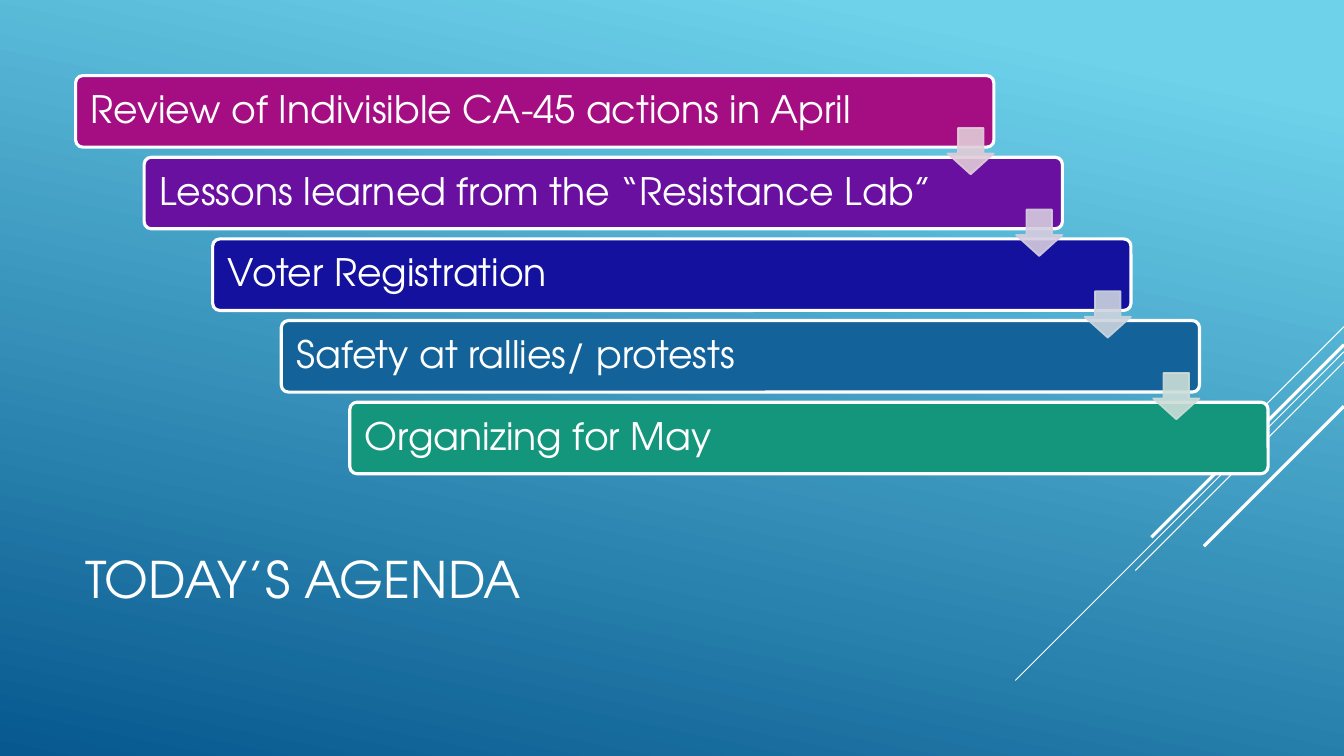
from lxml import etree
from pptx import Presentation
from pptx import util as u
from pptx.dml.color import RGBColor
from pptx.enum import shapes, text
from pptx.oxml import ns

WIDTH, HEIGHT = u.Inches(13.333), u.Inches(7.5)
FONT = "TeX Gyre Adventor"
WHITE = RGBColor(0xFF, 0xFF, 0xFF)
SKY = RGBColor(0x6E, 0xD2, 0xEB)
DEEP_BLUE = RGBColor(0x06, 0x58, 0x8E)

AGENDA = [
    ("Review of Indivisible CA-45 actions in April", RGBColor(0xA5, 0x0E, 0x82)),
    ("Lessons learned from the “Resistance Lab”", RGBColor(0x6A, 0x10, 0xA1)),
    ("Voter Registration", RGBColor(0x13, 0x11, 0x9D)),
    ("Safety at rallies/ protests", RGBColor(0x13, 0x63, 0x9A)),
    ("Organizing for May", RGBColor(0x14, 0x96, 0x7C)),
]
ARROW_COLOURS = [
    RGBColor(0xE1, 0xCC, 0xD8),
    RGBColor(0xD6, 0xCC, 0xDF),
    RGBColor(0xCC, 0xD4, 0xDE),
    RGBColor(0xCC, 0xDD, 0xD8),
]

# The staircase, in inches: each step moves right and down by the same amount.
START = 0.75
STEP_X, STEP_Y = 0.68, 0.81
BAR_WIDTH, BAR_HEIGHT = 9.11, 0.71
ARROW_SIZE, ARROW_DROP = 0.46, 0.52

# Diagonals at 45 degrees from the right edge: start height, run, line width.
DIAGONALS = [
    (3.24, 1.0, 0.75),
    (3.49, 3.26, 0.75),
    (3.59, 2.07, 0.75),
    (3.42, 1.91, 2.25),
    (4.03, 1.39, 2.25),
]


def apply_format(target, values):
    for name, value in values.items():
        setattr(target, name, value)


def paint_background(page):
    fill = page.background.fill
    fill.gradient()
    fill.gradient_angle = 258
    for stop, colour, position in zip(
        fill.gradient_stops, (SKY, DEEP_BLUE), (0.1, 1.0)
    ):
        stop.color.rgb = colour
        stop.position = position


def add_diagonal(page, top, run, weight):
    line = page.shapes.add_connector(
        shapes.MSO_CONNECTOR.STRAIGHT,
        WIDTH, u.Inches(top), WIDTH - u.Inches(run), u.Inches(top + run),
    )
    line.line.color.rgb = WHITE
    line.line.width = u.Pt(weight)
    etree.SubElement(line._element.spPr, ns.qn("a:effectLst"))


def add_preset(page, kind, place, adjustments, fill, outline, weight):
    shape = page.shapes.add_shape(kind, *map(u.Inches, place))
    shape.shadow.inherit = False
    for index, value in enumerate(adjustments):
        shape.adjustments[index] = value
    shape.fill.solid()
    shape.fill.fore_color.rgb = fill
    shape.line.color.rgb = outline
    shape.line.width = u.Pt(weight)
    return shape


def write(box, wording, size, inset, spacing=1.0):
    """Put one left-aligned, vertically centred line of white text in a box."""
    frame = box.text_frame
    apply_format(frame, {
        "word_wrap": True,
        "vertical_anchor": text.MSO_ANCHOR.MIDDLE,
        "margin_left": u.Inches(inset),
        "margin_right": u.Inches(inset),
    })
    para = frame.paragraphs[0]
    apply_format(para, {"alignment": text.PP_ALIGN.LEFT, "line_spacing": spacing})
    span = para.add_run()
    span.text = wording
    apply_format(span.font, {"name": FONT, "size": u.Pt(size)})
    span.font.color.rgb = WHITE


def add_bar(page, step, wording, colour):
    place = (START + step * STEP_X, START + step * STEP_Y, BAR_WIDTH, BAR_HEIGHT)
    bar = add_preset(
        page, shapes.MSO_SHAPE.ROUNDED_RECTANGLE, place, [0.1], colour, WHITE, 2.25
    )
    write(bar, wording, 27, 0.13, 0.9)


def add_arrow(page, step, colour):
    """Lead from the right end of one bar down to the next."""
    left = START + step * STEP_X + BAR_WIDTH - ARROW_SIZE
    top = START + step * STEP_Y + ARROW_DROP
    arrow = add_preset(
        page, shapes.MSO_SHAPE.DOWN_ARROW, (left, top, ARROW_SIZE, ARROW_SIZE),
        [0.55, 0.45], colour, colour, 1.25,
    )
    for tint in arrow._element.spPr.iter(ns.qn("a:srgbClr")):
        etree.SubElement(tint, ns.qn("a:alpha"), val="90000")


def add_title(page, wording):
    place = (START, 4.91, 9.33, 1.65)
    write(page.shapes.add_textbox(*map(u.Inches, place)), wording, 36, 0.1)


def main():
    deck = Presentation()
    apply_format(deck, {"slide_width": WIDTH, "slide_height": HEIGHT})
    page = deck.slides.add_slide(deck.slide_layouts[6])
    paint_background(page)
    for diagonal in DIAGONALS:
        add_diagonal(page, *diagonal)
    add_title(page, "TODAY’S AGENDA")
    for step, (wording, colour) in enumerate(AGENDA):
        add_bar(page, step, wording, colour)
    for step, colour in enumerate(ARROW_COLOURS):
        add_arrow(page, step, colour)
    deck.save("out.pptx")


if __name__ == "__main__":
    main()
